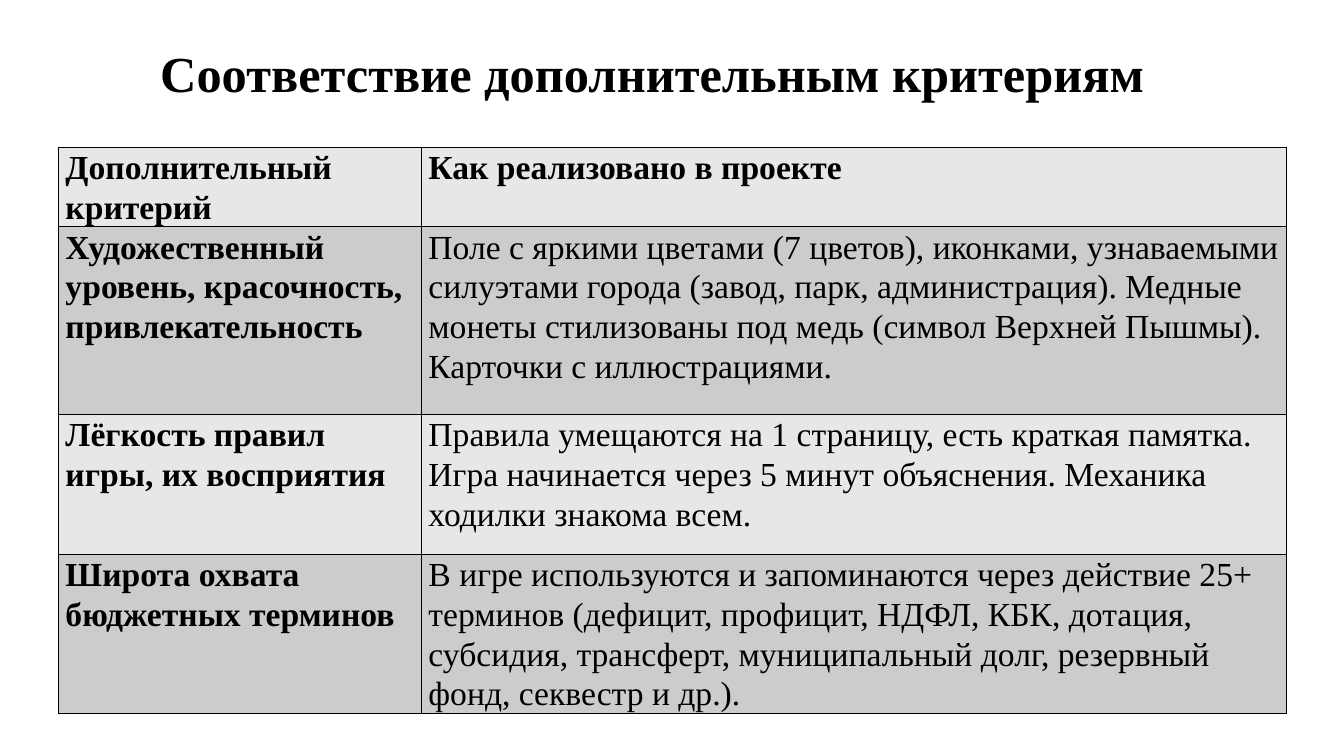
from dataclasses import dataclass

from lxml.etree import SubElement
from pptx import Presentation
from pptx.dml.color import RGBColor as Rgb
from pptx.enum.text import MSO_ANCHOR as Anchor, MSO_AUTO_SIZE as Fit, PP_ALIGN as Align
from pptx.oxml.ns import qn
from pptx.util import Inches, Pt


@dataclass(frozen=True)
class Theme:
    font: str = "Times New Roman"
    ink: str = "000000"
    bands: tuple = ("E7E7E7", "CCCCCC")
    title: int = 36
    body: int = 24
    rule: int = 1


THEME = Theme()
TITLE = "Соответствие дополнительным критериям"
COLS = (3.6, 8.58)
HEIGHTS = (0.46, 1.86, 1.39, 1.39)
ROWS = (
    ("Дополнительный критерий", "Как реализовано в проекте"),
    ("Художественный уровень, красочность, привлекательность",
     "Поле с яркими цветами (7 цветов), иконками, узнаваемыми силуэтами города "
     "(завод, парк, администрация). Медные монеты стилизованы под медь "
     "(символ Верхней Пышмы). Карточки с иллюстрациями."),
    ("Лёгкость правил игры, их восприятия",
     "Правила умещаются на 1 страницу, есть краткая памятка. Игра начинается "
     "через 5 минут объяснения. Механика ходилки знакома всем."),
    ("Широта охвата бюджетных терминов",
     "В игре используются и запоминаются через действие 25+ терминов (дефицит, "
     "профицит, НДФЛ, КБК, дотация, субсидия, трансферт, муниципальный долг, "
     "резервный фонд, секвестр и др.)."),
)


def style(para, size, bold):
    for run in para.runs:
        font = run.font
        font.name = THEME.font
        font.size = Pt(size)
        font.bold = bold
        font.color.rgb = Rgb.from_string(THEME.ink)


def add_title(slide):
    box = slide.shapes.add_textbox(Inches(1.44), Inches(0.36), Inches(10.06), Inches(0.71))
    frame = box.text_frame
    frame.text = TITLE
    frame.word_wrap = False
    frame.auto_size = Fit.SHAPE_TO_FIT_TEXT
    frame.vertical_anchor = Anchor.MIDDLE
    para = frame.paragraphs[0]
    para.alignment = Align.CENTER
    style(para, THEME.title, True)


def add_edges(cell):
    """Rule all four sides; border elements must come before the fill."""
    props = cell._tc.get_or_add_tcPr()
    for spot, side in enumerate(("lnL", "lnR", "lnT", "lnB")):
        line = SubElement(props, qn(f"a:{side}"), w=str(Pt(THEME.rule)))
        fill = SubElement(line, qn("a:solidFill"))
        SubElement(fill, qn("a:srgbClr"), val=THEME.ink)
        props.insert(spot, line)


def fill_cell(cell, text, band, bold):
    cell.text_frame.text = text
    cell.margin_left = cell.margin_right = Inches(0.07)
    cell.margin_top = cell.margin_bottom = 0
    cell.fill.solid()
    cell.fill.fore_color.rgb = Rgb.from_string(band)
    add_edges(cell)
    para = cell.text_frame.paragraphs[0]
    para.line_spacing = 1.07
    para.space_after = Pt(8)
    style(para, THEME.body, bold)


def add_grid(slide):
    table = slide.shapes.add_table(
        len(ROWS), len(COLS), Inches(0.58), Inches(1.46),
        Inches(sum(COLS)), Inches(sum(HEIGHTS))).table
    for col, width in zip(table.columns, COLS):
        col.width = Inches(width)
    for r, (texts, height) in enumerate(zip(ROWS, HEIGHTS)):
        table.rows[r].height = Inches(height)
        for c, text in enumerate(texts):
            fill_cell(table.cell(r, c), text, THEME.bands[r % 2], r == 0 or c == 0)


def main():
    deck = Presentation()
    deck.slide_width, deck.slide_height = Inches(13.33), Inches(7.5)
    slide = deck.slides.add_slide(deck.slide_layouts[6])
    add_grid(slide)
    add_title(slide)
    deck.save("out.pptx")


if __name__ == "__main__":
    main()
